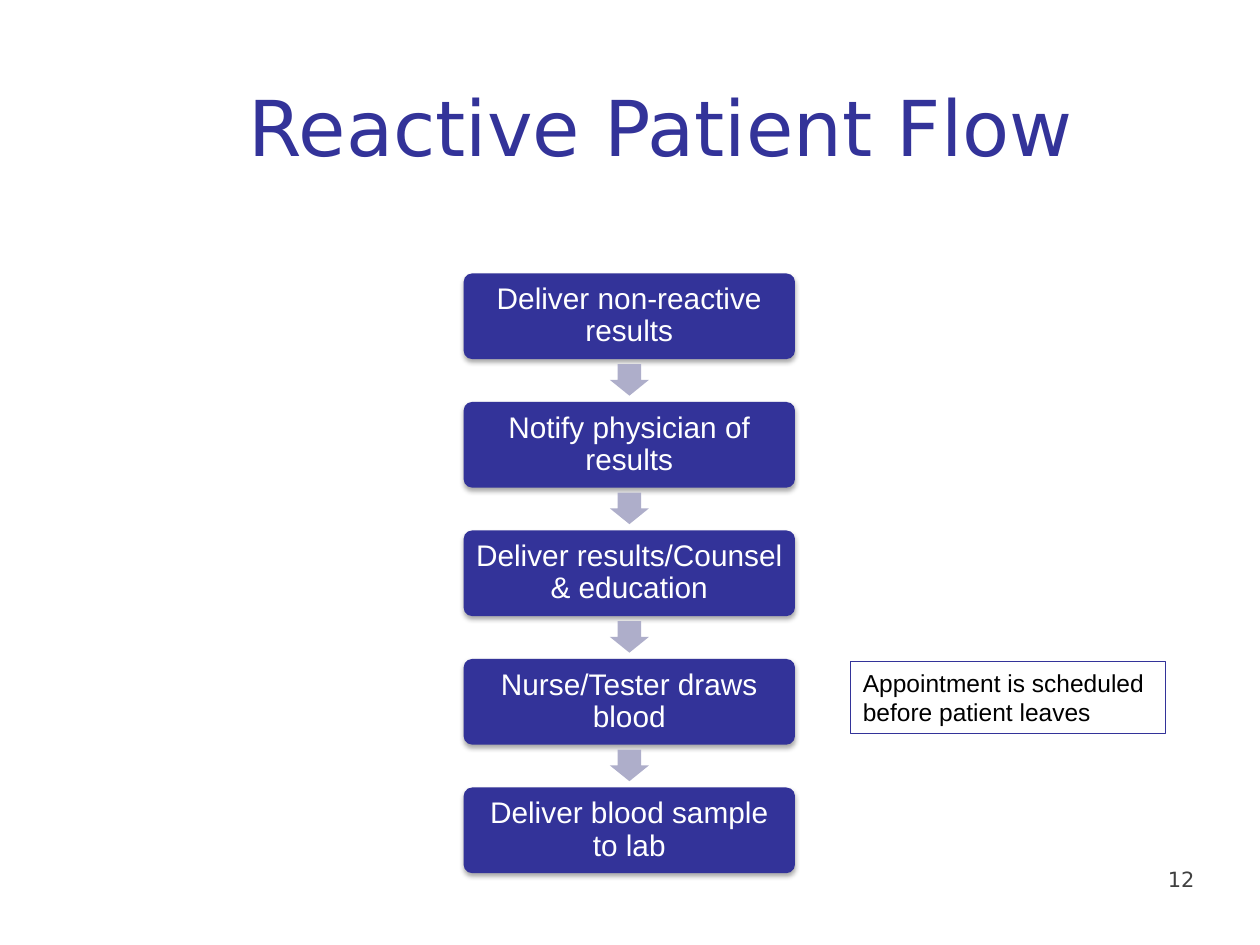
from dataclasses import dataclass

from lxml.etree import SubElement
from pptx import Presentation
from pptx.dml.color import RGBColor
from pptx.enum.shapes import MSO_SHAPE as Shape
from pptx.enum.text import MSO_ANCHOR as Anchor, PP_ALIGN as Align
from pptx.oxml.ns import qn
from pptx.util import Inches, Pt


@dataclass(frozen=True)
class Theme:
    indigo: str = "333399"
    lavender: str = "AEAECA"
    white: str = "FFFFFF"
    black: str = "000000"
    grey: str = "404040"
    display_font: str = "DejaVu Sans"
    body_font: str = "Arial"
    title_size: int = 44
    step_size: int = 17
    note_size: int = 14
    number_size: int = 12


THEME = Theme()

STEPS = (
    "Deliver non-reactive results",
    "Notify physician of results",
    "Deliver results/Counsel & education",
    "Nurse/Tester draws blood",
    "Deliver blood sample to lab",
)
STEP_LEFT, STEP_TOP = 3.68, 2.17
STEP_WIDTH, STEP_HEIGHT = 2.63, 0.68
STEP_PITCH = 1.02
ARROW_LEFT, ARROW_DROP = 4.87, 0.69
ARROW_LENGTH, ARROW_WIDTH = 0.25, 0.31


def color(value):
    return RGBColor.from_string(value)


def write(frame, text, font, size, ink, align=Align.LEFT, anchor=Anchor.TOP):
    frame.word_wrap = True
    frame.vertical_anchor = anchor
    paragraph = frame.paragraphs[0]
    paragraph.alignment = align
    run = paragraph.add_run()
    run.text = text
    run.font.name = font
    run.font.size = Pt(size)
    run.font.color.rgb = color(ink)
    return paragraph


def add_label(slide, bounds, text, size, ink, align=Align.LEFT):
    label = slide.shapes.add_textbox(*map(Inches, bounds))
    write(label.text_frame, text, THEME.display_font, size, ink, align)


def add_block(slide, kind, bounds, fill):
    block = slide.shapes.add_shape(kind, *map(Inches, bounds))
    block.shadow.inherit = False
    block.fill.solid()
    block.fill.fore_color.rgb = color(fill)
    block.line.fill.background()
    return block


def add_soft_shadow(block):
    effects = block._element.spPr.find(qn("a:effectLst"))
    shadow = SubElement(
        effects, qn("a:outerShdw"), blurRad=str(Pt(3.1)), dist=str(Pt(1.8)),
        dir="5400000", rotWithShape="0",
    )
    tint = SubElement(shadow, qn("a:srgbClr"), val=THEME.black)
    SubElement(tint, qn("a:alpha"), val="35000")


def add_step(slide, top, text):
    step = add_block(slide, Shape.ROUNDED_RECTANGLE,
                     (STEP_LEFT, top, STEP_WIDTH, STEP_HEIGHT), THEME.indigo)
    step.adjustments[0] = 0.1
    add_soft_shadow(step)
    frame = step.text_frame
    frame.margin_left = frame.margin_right = Inches(0.07)
    frame.margin_top = frame.margin_bottom = Inches(0.07)
    paragraph = write(frame, text, THEME.body_font, THEME.step_size,
                      THEME.white, Align.CENTER, Anchor.MIDDLE)
    paragraph.line_spacing = 0.9


def add_down_arrow(slide, top):
    arrow = add_block(slide, Shape.RIGHT_ARROW,
                      (ARROW_LEFT, top, ARROW_LENGTH, ARROW_WIDTH), THEME.lavender)
    arrow.rotation = 90
    arrow.adjustments[0] = 0.6
    arrow.adjustments[1] = 0.5


def add_flow(slide):
    for index, text in enumerate(STEPS):
        top = STEP_TOP + index * STEP_PITCH
        add_step(slide, top, text)
        if index < len(STEPS) - 1:
            add_down_arrow(slide, top + ARROW_DROP)


def add_note(slide, bounds, text):
    note = slide.shapes.add_shape(Shape.RECTANGLE, *map(Inches, bounds))
    note.shadow.inherit = False
    note.fill.background()
    note.line.color.rgb = color(THEME.indigo)
    note.line.width = Pt(0.75)
    write(note.text_frame, text, THEME.body_font, THEME.note_size, THEME.black)


def main():
    deck = Presentation()
    deck.slide_width, deck.slide_height = Inches(10), Inches(7.5)
    slide = deck.slides.add_slide(deck.slide_layouts[6])
    add_label(slide, (1.25, 0.58, 8, 1.25), "Reactive Patient Flow",
              THEME.title_size, THEME.indigo, Align.CENTER)
    add_flow(slide)
    add_label(slide, (9.17, 6.83, 0.58, 0.5), "12", THEME.number_size, THEME.grey)
    add_note(slide, (6.75, 5.25, 2.5, 0.57),
             "Appointment is scheduled before patient leaves")
    deck.save("out.pptx")


if __name__ == "__main__":
    main()
